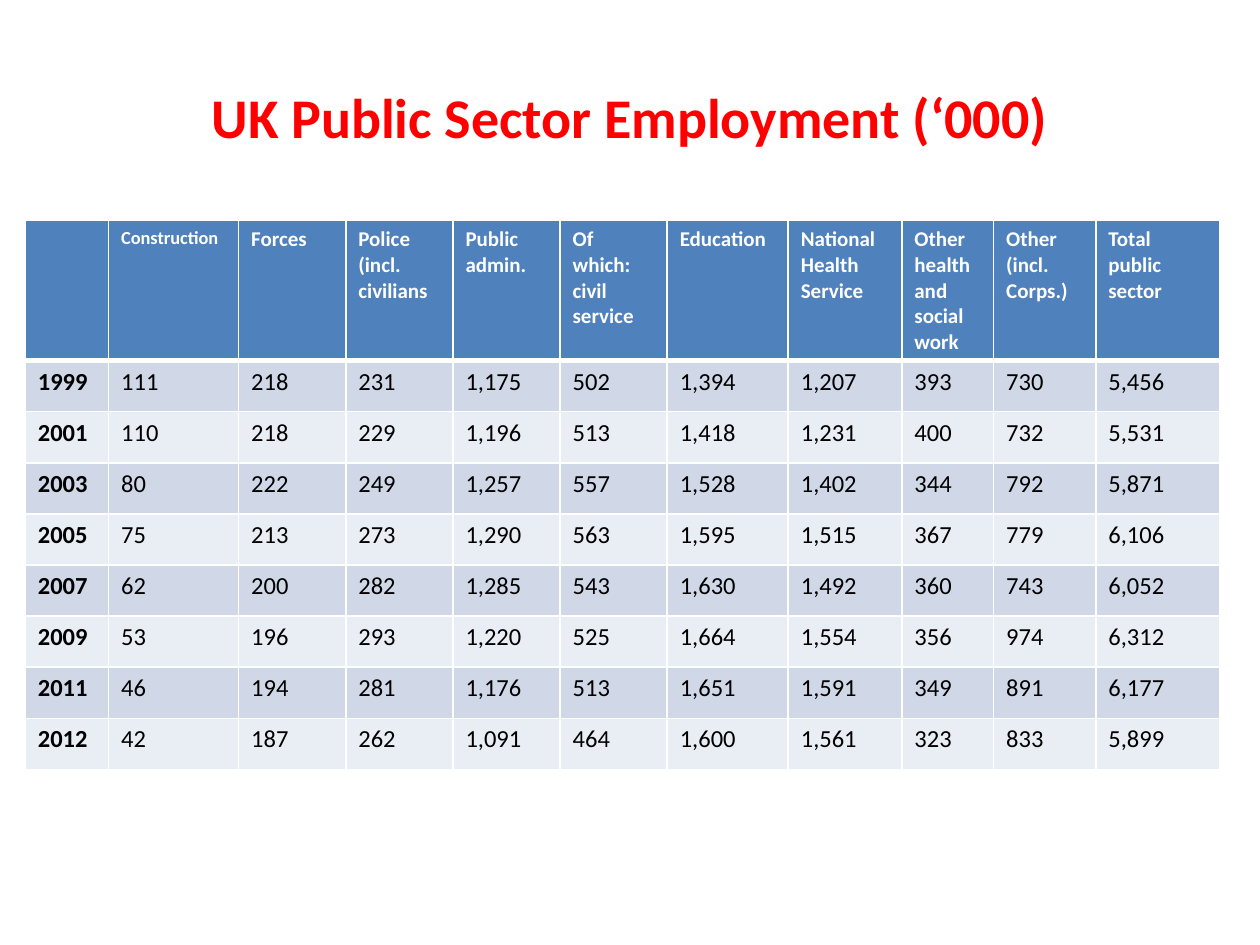
from lxml import etree
from pptx import Presentation
from pptx.dml.color import RGBColor
from pptx.enum.text import MSO_ANCHOR, PP_ALIGN
from pptx.oxml.ns import qn
from pptx.util import Cm, Pt

MIDDLE = MSO_ANCHOR.MIDDLE
CENTER = PP_ALIGN.CENTER
LEFT = PP_ALIGN.LEFT

RED = RGBColor(0xFF, 0x00, 0x00)
WHITE = RGBColor(0xFF, 0xFF, 0xFF)
BLACK = RGBColor(0x00, 0x00, 0x00)
BLUE = RGBColor(0x4F, 0x81, 0xBD)
BANDS = (RGBColor(0xD0, 0xD8, 0xE8), RGBColor(0xE9, 0xED, 0xF4))

TITLE = "UK Public Sector Employment (‘000)"
HEADS = ["", "Construction", "Forces", "Police (incl. civilians", "Public admin.",
         "Of which: civil service", "Education", "National Health Service",
         "Other health and social work", "Other (incl. Corps.)",
         "Total public sector"]
DATA = [
    (1999, 111, 218, 231, 1175, 502, 1394, 1207, 393, 730, 5456),
    (2001, 110, 218, 229, 1196, 513, 1418, 1231, 400, 732, 5531),
    (2003, 80, 222, 249, 1257, 557, 1528, 1402, 344, 792, 5871),
    (2005, 75, 213, 273, 1290, 563, 1595, 1515, 367, 779, 6106),
    (2007, 62, 200, 282, 1285, 543, 1630, 1492, 360, 743, 6052),
    (2009, 53, 196, 293, 1220, 525, 1664, 1554, 356, 974, 6312),
    (2011, 46, 194, 281, 1176, 513, 1651, 1591, 349, 891, 6177),
    (2012, 42, 187, 262, 1091, 464, 1600, 1561, 323, 833, 5899),
]
WIDTHS = [1.68, 2.62, 2.16, 2.16, 2.16, 2.16, 2.44, 2.29, 1.85, 2.06, 2.49]
HEAD_H, ROW_H = 2.82, 1.03


def put(frame, text, align, form):
    par = frame.paragraphs[0]
    par.alignment = align
    run = par.add_run()
    run.text = text
    run.font.color.rgb = form["color"]
    for name in ("name", "size", "bold"):
        setattr(run.font, name, form[name])


def style(size, color, bold):
    return {"name": "Calibri", "size": Pt(size), "color": color, "bold": bold}


def edge(cell, sides):
    props = cell._tc.get_or_add_tcPr()
    for side, width in sides.items():
        line = etree.SubElement(props, qn("a:ln" + side), w=str(Pt(width)))
        fill = etree.SubElement(line, qn("a:solidFill"))
        etree.SubElement(fill, qn("a:srgbClr"), val=str(WHITE))


def add_title(slide):
    box = slide.shapes.add_textbox(Cm(1.27), Cm(0.76), Cm(22.86), Cm(3.18))
    frame = box.text_frame
    frame.word_wrap = True
    frame.vertical_anchor = MIDDLE
    put(frame, TITLE, CENTER, style(32, RED, True))


def add_grid(slide):
    rows = [HEADS] + [[str(year)] + [f"{n:,}" for n in nums] for year, *nums in DATA]
    tall = [HEAD_H] + [ROW_H] * len(DATA)
    table = slide.shapes.add_table(len(rows), len(HEADS), Cm(0.51), Cm(4.45),
                                   Cm(sum(WIDTHS)), Cm(sum(tall))).table
    for col, width in zip(table.columns, WIDTHS):
        col.width = Cm(width)
    for r, texts in enumerate(rows):
        table.rows[r].height = Cm(tall[r])
        for c, text in enumerate(texts):
            cell = table.cell(r, c)
            edge(cell, {"L": 1, "R": 1, "T": 3 if r == 1 else 1, "B": 3 if r == 0 else 1})
            cell.fill.solid()
            cell.fill.fore_color.rgb = BANDS[(r - 1) % 2] if r else BLUE
            if r:
                form = style(14, BLACK, c == 0)
            else:
                form = style(10.5 if c == 1 else 12, WHITE, True)
            if text:
                put(cell.text_frame, text, LEFT, form)


def main():
    deck = Presentation()
    deck.slide_width, deck.slide_height = Cm(25.4), Cm(19.05)
    slide = deck.slides.add_slide(deck.slide_layouts[6])
    add_title(slide)
    add_grid(slide)
    deck.save("out.pptx")


if __name__ == "__main__":
    main()
